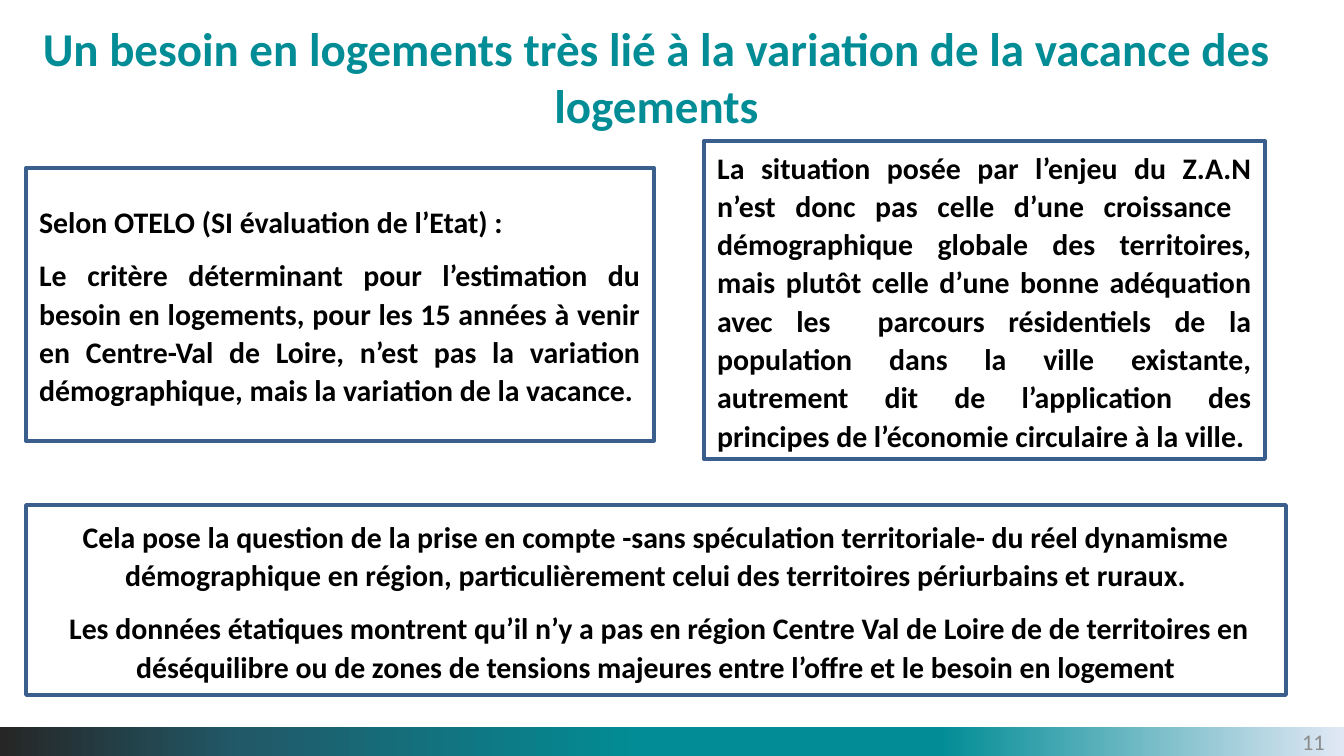
from lxml import etree
from pptx import Presentation
from pptx import util as u
from pptx.dml.color import RGBColor
from pptx.enum import shapes, text
from pptx.oxml.ns import qn

PX = 914400 / 134.4
COLORS = {"teal": "028D96", "white": "FFFFFF", "black": "000000",
          "border": "3A5F8C", "number": "8C8C8C"}
BAND_STOPS = [(0, "262626"), (18, "215968"), (48, "028D96"),
              (70, "028D96"), (100, "E1E8F5")]
ALIGN = text.PP_ALIGN
BODY = {"size": u.Pt(16), "bold": True}

OTELO = [
    "Selon OTELO (SI évaluation de l’Etat) : ",
    "Le critère déterminant pour l’estimation du besoin en logements, pour les "
    "15 années à venir en Centre-Val de Loire, n’est pas la variation "
    "démographique, mais la variation de la vacance.",
]
ZAN = [
    "La situation posée par l’enjeu du Z.A.N n’est donc pas celle d’une "
    "croissance  démographique globale des territoires, mais plutôt celle d’une "
    "bonne adéquation avec les  parcours résidentiels de la population dans la "
    "ville existante, autrement dit de l’application des principes de "
    "l’économie circulaire à la ville.",
]
QUESTION = [
    "Cela pose la question de la prise en compte -sans spéculation "
    "territoriale- du réel dynamisme démographique en région, particulièrement "
    "celui des territoires périurbains et ruraux.",
    " Les données étatiques montrent qu’il n’y a pas en région Centre Val de "
    "Loire de de territoires en déséquilibre ou de zones de tensions majeures "
    "entre l’offre et le besoin en logement",
]


def rgb(name):
    return RGBColor.from_string(COLORS[name])


def emu(box):
    return [u.Emu(round(v * PX)) for v in box]


def write(sp, lines, color, font, para):
    tf = sp.text_frame
    tf.word_wrap = True
    tf.auto_size = text.MSO_AUTO_SIZE.NONE
    tf.vertical_anchor = text.MSO_ANCHOR.MIDDLE
    for i, line in enumerate(lines):
        p = tf.paragraphs[0] if i == 0 else tf.add_paragraph()
        for key, value in para.items():
            setattr(p, key, value)
        r = p.add_run()
        r.text = line
        for key, value in {"name": "Calibri", **font}.items():
            setattr(r.font, key, value)
        r.font.color.rgb = rgb(color)


def add_title(s, box, line):
    sp = s.shapes.title
    sp.left, sp.top, sp.width, sp.height = emu(box)
    sp.fill.solid()
    sp.fill.fore_color.rgb = rgb("white")
    write(sp, [line], "teal", {"size": u.Pt(25.2), "bold": True},
          {"alignment": ALIGN.CENTER})


def add_footer(s, box, number):
    x, y, w, h = box
    sp = s.shapes.add_shape(shapes.MSO_SHAPE.RECTANGLE, *emu(box))
    sp.shadow.inherit = False
    sp.line.fill.background()
    sp.fill.gradient()
    sp.fill.gradient_angle = 0
    stops = sp.fill._fill._gradFill.find(qn("a:gsLst"))
    for gs in list(stops):
        stops.remove(gs)
    for pos, color in BAND_STOPS:
        gs = etree.SubElement(stops, qn("a:gs"), pos=str(pos * 1000))
        etree.SubElement(gs, qn("a:srgbClr"), val=color)
    label = s.shapes.add_textbox(*emu((x + w - 101, y, 95, h)))
    write(label, [number], "number", {"size": u.Pt(12)},
          {"alignment": ALIGN.RIGHT})


def add_panel(s, box, lines, align, filled=False):
    sp = s.shapes.add_shape(shapes.MSO_SHAPE.RECTANGLE, *emu(box))
    sp.shadow.inherit = False
    if filled:
        sp.fill.solid()
        sp.fill.fore_color.rgb = rgb("white")
    else:
        sp.fill.background()
    sp.line.color.rgb = rgb("border")
    sp.line.width = u.Pt(2)
    write(sp, lines, "black", BODY,
          {"alignment": align, "line_spacing": 1.07, "space_after": u.Pt(8)})


def main():
    prs = Presentation()
    prs.slide_width, prs.slide_height = emu((1344, 756))
    s = prs.slides.add_slide(prs.slide_layouts[5])
    add_footer(s, (0, 727, 1344, 29), "11")
    add_title(s, (0, 24, 1313, 104),
              "Un besoin en logements très lié à la variation de la vacance "
              "des logements")
    add_panel(s, (704, 141, 561, 318), ZAN, ALIGN.JUSTIFY)
    add_panel(s, (26, 168, 628, 273), OTELO, ALIGN.JUSTIFY, filled=True)
    add_panel(s, (26, 505, 1260, 190), QUESTION, ALIGN.CENTER)
    prs.save("out.pptx")


if __name__ == "__main__":
    main()
